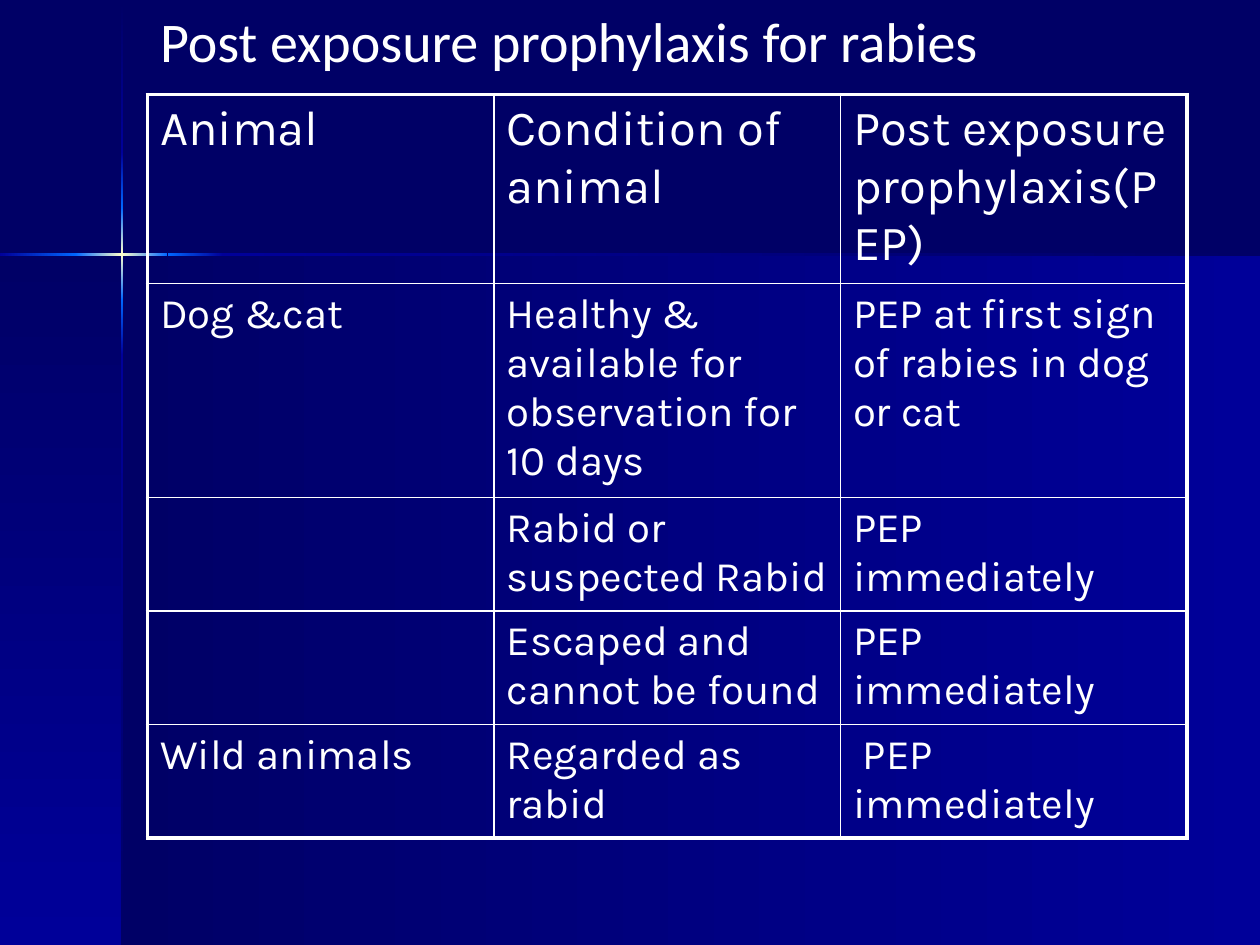
from copy import deepcopy

from lxml import etree
from pptx import Presentation
from pptx.dml.color import RGBColor
from pptx.enum.shapes import MSO_SHAPE as Shape
from pptx.enum.text import MSO_ANCHOR as Anchor, MSO_AUTO_SIZE as AutoSize, PP_ALIGN as Align
from pptx.oxml.ns import qn
from pptx.util import Inches, Pt

NAVY = RGBColor(0x00, 0x00, 0x66)
BLUE = RGBColor(0x00, 0x00, 0x99)
BRIGHT = RGBColor(0x00, 0x66, 0xFF)
CREAM = RGBColor(0xFF, 0xFF, 0xCC)
WHITE = RGBColor(0xFF, 0xFF, 0xFF)

prs = Presentation()
prs.slide_width, prs.slide_height = Inches(10), Inches(7.5)
slide = prs.slides.add_slide(prs.slide_layouts[5])
slide.background.fill.solid()
slide.background.fill.fore_color.rgb = NAVY


def add_gradient_panel(box, colors, downward):
    s = slide.shapes.add_shape(Shape.RECTANGLE, *[Inches(v) for v in box])
    s.shadow.inherit = False
    s.line.fill.background()
    s.fill.gradient()
    # python-pptx counts angles anticlockwise, so 270 runs from top to bottom
    s.fill.gradient_angle = 270 if downward else 0
    stops = s._element.spPr.find(qn("a:gradFill")).find(qn("a:gsLst"))
    while len(stops) < len(colors):
        stops.append(deepcopy(stops[-1]))
    for i, (stop, color) in enumerate(zip(s.fill.gradient_stops, colors)):
        stop.position = i / (len(colors) - 1)
        stop.color.rgb = color


def set_border(cell, side, width):
    ln = etree.SubElement(cell._tc.get_or_add_tcPr(), qn(f"a:ln{side}"), w=str(Pt(width)))
    fill = etree.SubElement(ln, qn("a:solidFill"))
    etree.SubElement(fill, qn("a:srgbClr"), val=str(WHITE))


# Background panels, then the two beams that cross in a star
panels = [
    ((0.97, 2.02, 9.03, 5.48), (NAVY, BLUE), False),
    ((0, 2.02, 0.97, 5.48), (NAVY, BLUE), True),
]
vertical_beam = [
    (0.01, 1.2, (NAVY, BLUE)),
    (2.82, 4.68, (BLUE, NAVY)),
    (2.38, 0.44, (BRIGHT, BLUE)),
    (1.21, 0.44, (BLUE, BRIGHT)),
    (1.65, 0.73, (BRIGHT, CREAM, BRIGHT)),
]
horizontal_beam = [
    (1.77, 8.23, (BLUE, NAVY)),
    (0, 0.61, (BLUE, BRIGHT)),
    (1.33, 0.44, (BRIGHT, BLUE)),
    (0.6, 0.73, (BRIGHT, CREAM, BRIGHT)),
]
panels += [((0.96, y, 0.02, h), colors, True) for y, h, colors in vertical_beam]
panels += [((x, 2.01, w, 0.02), colors, False) for x, w, colors in horizontal_beam]
for box, colors, downward in panels:
    add_gradient_panel(box, colors, downward)

# Title, brought in front of the panels
title = slide.shapes.title
slide.shapes._spTree.append(title._element)
title.left, title.top, title.width, title.height = [Inches(v) for v in (1.17, 0, 8.25, 2.17)]
tf = title.text_frame
tf.text = "Post exposure prophylaxis for rabies"
tf.auto_size = AutoSize.NONE
tf.vertical_anchor = Anchor.TOP
p = tf.paragraphs[0]
p.alignment = Align.LEFT
font = p.runs[0].font
font.name, font.size, font.color.rgb = "Calibri", Pt(32), WHITE

# Table
rows = [
    ("Animal", "Condition of animal", "Post exposure prophylaxis(PEP)"),
    ("Dog &cat", "Healthy & available for observation for 10 days",
     "PEP at first sign of rabies in dog or cat"),
    ("", "Rabid or suspected Rabid", "PEP immediately"),
    ("", "Escaped and cannot be found", "PEP immediately"),
    ("Wild animals", "Regarded as rabid", " PEP immediately"),
]
row_heights = [1.5, 1.7, 0.9, 0.9, 0.9]
table = slide.shapes.add_table(
    len(rows), 3, Inches(1.17), Inches(0.75), Inches(8.25), Inches(sum(row_heights))).table
table.first_row = table.horz_banding = False
for column in table.columns:
    column.width = Inches(2.75)

for r, (texts, height) in enumerate(zip(rows, row_heights)):
    table.rows[r].height = Inches(height)
    for c, text in enumerate(texts):
        cell = table.cell(r, c)
        outer = {"L": c == 0, "R": c == 2, "T": r == 0, "B": r == len(rows) - 1}
        for side, is_outer in outer.items():
            set_border(cell, side, 2.25 if is_outer else 1)
        cell.fill.background()
        if text:
            cell.text_frame.text = text
            font = cell.text_frame.paragraphs[0].runs[0].font
            font.name, font.color.rgb = "Karla", WHITE
            font.size = Pt(28 if r == 0 else 24)

prs.save("out.pptx")
